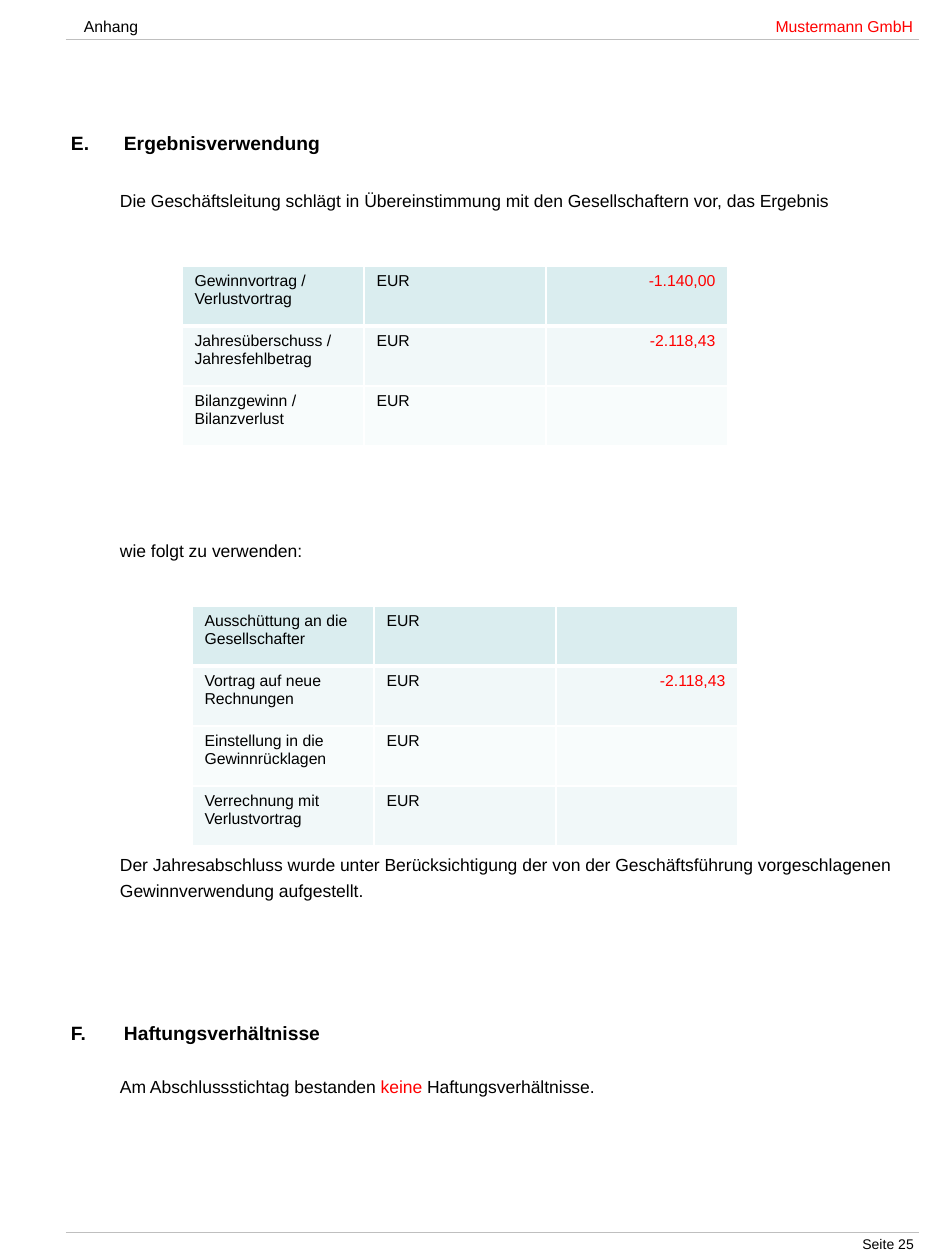
from lxml import etree
from pptx import Presentation
from pptx import util as u
from pptx.dml.color import RGBColor
from pptx.enum import shapes, text
from pptx.oxml import ns

COLORS = {
    "ink": "000000", "variable": "FF0000", "rule": "BFBFBF", "border": "FFFFFF",
    "first": "DAEDEF", "odd": "F1F8F9", "even": "F8FCFC",
}
FONT = "Arial"
RIGHT = text.PP_ALIGN.RIGHT
COLUMN, ROW = 182, 60
BODY_LEFT = 120

PROFIT = [
    ("Gewinnvortrag / Verlustvortrag", "EUR", "-1.140,00"),
    ("Jahresüberschuss / Jahresfehlbetrag", "EUR", "-2.118,43"),
    ("Bilanzgewinn / Bilanzverlust", "EUR", ""),
]
APPROPRIATION = [
    ("Ausschüttung an die Gesellschafter", "EUR", ""),
    ("Vortrag auf neue Rechnungen", "EUR", "-2.118,43"),
    ("Einstellung in die Gewinnrücklagen", "EUR", ""),
    ("Verrechnung mit Verlustvortrag", "EUR", ""),
]


def px(length):
    return u.Emu(round(length * 914400 / 126))


def rgb(name):
    return RGBColor.from_string(COLORS[name])


def write(paragraph, content, size=10, color="ink", bold=False, align=None):
    run = paragraph.add_run()
    run.text = content
    run.font.name, run.font.size, run.font.bold = FONT, u.Pt(size), bold
    run.font.color.rgb = rgb(color)
    if align is not None:
        paragraph.alignment = align


def add_line_box(slide, left, top, width, height):
    frame = slide.shapes.add_textbox(px(left), px(top), px(width), px(height)).text_frame
    frame.word_wrap = True
    frame.margin_left = frame.margin_top = frame.margin_right = frame.margin_bottom = 0
    return frame.paragraphs[0]


def add_heading(slide, top, letter, title):
    heading = add_line_box(slide, 71, top, 842, 24)
    properties = heading._p.get_or_add_pPr()
    properties.set("marL", str(px(53)))
    properties.set("indent", str(-px(53)))
    write(heading, f"{letter}\t{title}", size=11, bold=True)


def add_body(slide, top, *parts, lines=1):
    body = add_line_box(slide, BODY_LEFT, top, 793, 27 * lines)
    body.line_spacing = u.Pt(15)
    for content, color in parts:
        write(body, content, color=color)


def add_rule(slide, y):
    rule = slide.shapes.add_connector(shapes.MSO_CONNECTOR.STRAIGHT, px(66), px(y), px(919), px(y))
    rule.line.color.rgb = rgb("rule")
    rule.line.width = u.Pt(0.1)
    etree.SubElement(rule._element.spPr, ns.qn("a:effectLst"))


def set_borders(cell, **widths):
    properties = cell._tc.get_or_add_tcPr()
    for position, side in enumerate("LRTB"):
        edge = etree.Element(ns.qn(f"a:ln{side}"), w=str(u.Pt(widths.get(side, 1))))
        fill = etree.SubElement(edge, ns.qn("a:solidFill"))
        etree.SubElement(fill, ns.qn("a:srgbClr"), val=COLORS["border"])
        properties.insert(position, edge)


def add_amounts(slide, left, top, entries):
    amounts = slide.shapes.add_table(
        len(entries), 3, px(left), px(top), px(3 * COLUMN), px(ROW * len(entries))).table
    amounts.first_row = amounts.horz_banding = False
    for column in amounts.columns:
        column.width = px(COLUMN)
    for r, entry in enumerate(entries):
        amounts.rows[r].height = px(ROW)
        shade = "first" if r == 0 else "odd" if r % 2 else "even"
        thick = {0: {"B": 3}, 1: {"T": 3}}.get(r, {})
        for c, content in enumerate(entry):
            cell = amounts.cell(r, c)
            cell.fill.solid()
            cell.fill.fore_color.rgb = rgb(shade)
            set_borders(cell, **thick)
            if content:
                style = {"color": "variable", "align": RIGHT} if c == 2 else {}
                write(cell.text_frame.paragraphs[0], content, size=9, **style)


def main():
    deck = Presentation()
    deck.slide_width, deck.slide_height = u.Inches(7.5), u.Inches(10)
    slide = deck.slides.add_slide(deck.slide_layouts[6])

    write(add_line_box(slide, 84, 17, 300, 20), "Anhang", size=9)
    write(add_line_box(slide, 613, 17, 300, 20), "Mustermann GmbH",
          size=9, color="variable", align=RIGHT)
    add_rule(slide, 39)

    add_heading(slide, 131, "E.", "Ergebnisverwendung")
    add_body(slide, 185, ("Die Geschäftsleitung schlägt in Übereinstimmung mit den "
                          "Gesellschaftern vor, das Ergebnis", "ink"))
    add_amounts(slide, 182, 266, PROFIT)
    add_body(slide, 535, ("wie folgt zu verwenden:", "ink"))
    add_amounts(slide, 192, 606, APPROPRIATION)
    add_body(slide, 849, ("Der Jahresabschluss wurde unter Berücksichtigung der von der "
                          "Geschäftsführung vorgeschlagenen Gewinnverwendung aufgestellt.",
                          "ink"), lines=2)

    add_heading(slide, 1021, "F.", "Haftungsverhältnisse")
    add_body(slide, 1071, ("Am Abschlussstichtag bestanden ", "ink"), ("keine", "variable"),
             (" Haftungsverhältnisse.", "ink"))

    add_rule(slide, 1232)
    write(add_line_box(slide, 714, 1236, 200, 18), "Seite 25", size=8, align=RIGHT)
    deck.save("out.pptx")


if __name__ == "__main__":
    main()
